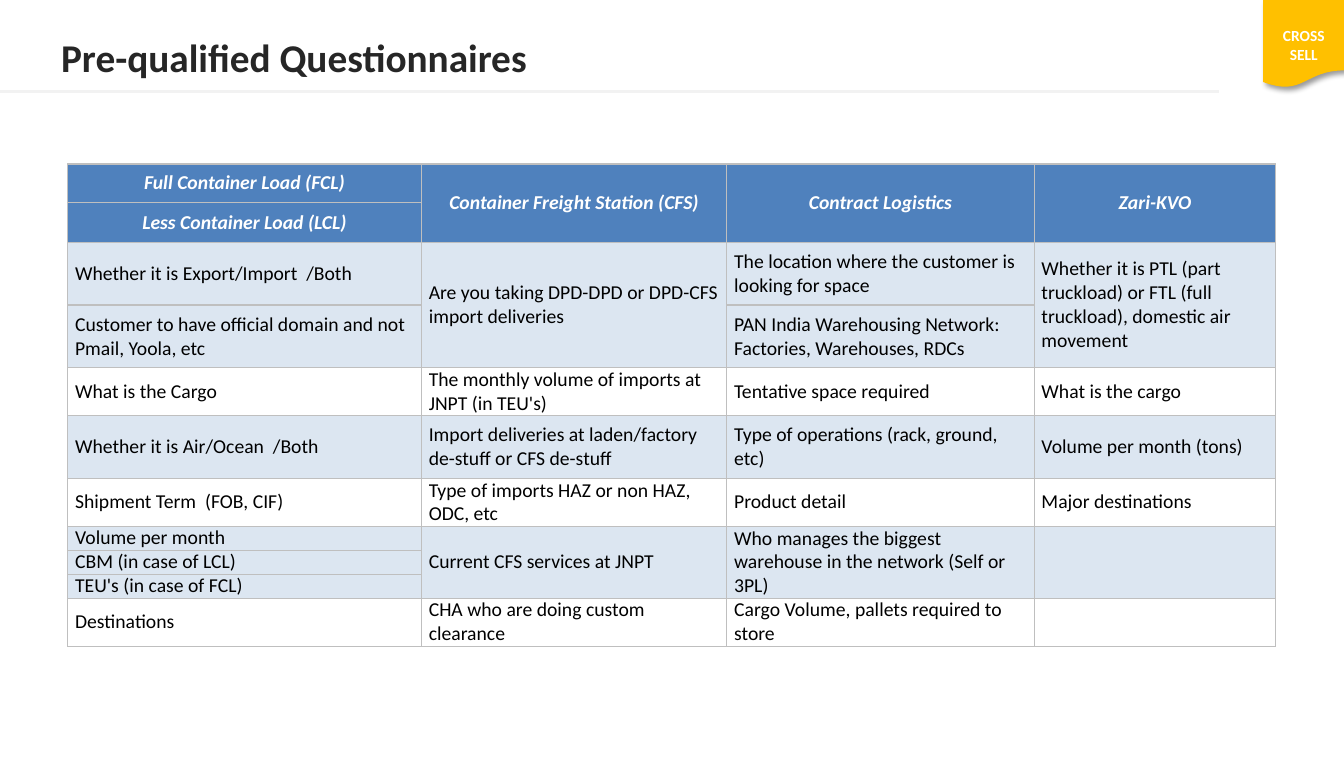
from dataclasses import dataclass

from lxml import etree
from pptx import Presentation
from pptx.dml.color import RGBColor
from pptx.enum.shapes import MSO_CONNECTOR, MSO_SHAPE
from pptx.enum.text import MSO_ANCHOR, PP_ALIGN
from pptx.oxml import parse_xml
from pptx.oxml.ns import nsdecls, qn
from pptx.slide import Slide
from pptx.table import Table, _Cell
from pptx.text.text import TextFrame
from pptx.util import Pt

LINE = MSO_CONNECTOR.STRAIGHT
BADGE = MSO_SHAPE.FLOWCHART_DOCUMENT
MIDDLE = MSO_ANCHOR.MIDDLE
CENTER = PP_ALIGN.CENTER
LEFT = PP_ALIGN.LEFT

WHITE = RGBColor(0xFF, 0xFF, 0xFF)
BLACK = RGBColor(0x00, 0x00, 0x00)
INK = RGBColor(0x26, 0x26, 0x26)
BLUE = RGBColor(0x4F, 0x81, 0xBD)
PALE = RGBColor(0xDC, 0xE6, 0xF1)
GOLD = RGBColor(0xFF, 0xC0, 0x00)
RULE = RGBColor(0xF2, 0xF2, 0xF2)
EDGE = RGBColor(0xBF, 0xBF, 0xBF)
FONT = "Calibri"


@dataclass(frozen=True)
class Row:
    """One table row; a text of None joins the cell above."""
    height: float
    fill: RGBColor
    texts: tuple[str | None, ...]


WIDTHS = (252, 217.6, 219, 172.2)
ROWS = (
    Row(27.4, BLUE, ("Full Container Load (FCL)", "Container Freight Station (CFS)",
                     "Contract Logistics", "Zari-KVO")),
    Row(28.6, BLUE, ("Less Container Load (LCL)", None, None, None)),
    Row(44.6, PALE, ("Whether it is Export/Import  /Both",
                     "Are you taking DPD-DPD or DPD-CFS import deliveries",
                     "The location where the customer is looking for space",
                     "Whether it is PTL (part truckload) or FTL (full truckload), "
                     "domestic air movement")),
    Row(44.6, PALE, ("Customer to have official domain and not Pmail, Yoola, etc", None,
                     "PAN India Warehousing Network: Factories, Warehouses, RDCs", None)),
    Row(34.2, WHITE, ("What is the Cargo",
                      "The monthly volume of imports at JNPT (in TEU's)",
                      "Tentative space required", "What is the cargo")),
    Row(44.6, PALE, ("Whether it is Air/Ocean  /Both",
                     "Import deliveries at laden/factory de-stuff or CFS de-stuff",
                     "Type of operations (rack, ground, etc)",
                     "Volume per month (tons)")),
    Row(34.2, WHITE, ("Shipment Term  (FOB, CIF)",
                      "Type of imports HAZ or non HAZ, ODC, etc",
                      "Product detail", "Major destinations")),
    Row(17.1, PALE, ("Volume per month", "Current CFS services at JNPT",
                     "Who manages the biggest warehouse in the network (Self or 3PL)", "")),
    Row(17.1, PALE, ("CBM (in case of LCL)", None, None, None)),
    Row(17.1, PALE, ("TEU's (in case of FCL)", None, None, None)),
    Row(34.2, WHITE, ("Destinations", "CHA who are doing custom clearance",
                      "Cargo Volume, pallets required to store", "")),
)


def write(frame: TextFrame, text: str, size: float, color: RGBColor,
          bold: bool = False, italic: bool = False, align: PP_ALIGN = LEFT) -> None:
    frame.word_wrap = True
    para = frame.paragraphs[0]
    para.text = text
    para.alignment = align
    font = para.font
    font.name, font.size = FONT, Pt(size)
    font.bold, font.italic = bold, italic
    font.color.rgb = color


def add_edges(cell: _Cell) -> None:
    props = cell._tc.get_or_add_tcPr()
    for side in ("lnL", "lnR", "lnT", "lnB"):
        props.append(parse_xml(
            f'<a:{side} {nsdecls("a")} w="{Pt(1)}"><a:solidFill>'
            f'<a:srgbClr val="{EDGE}"/></a:solidFill></a:{side}>'))


def fill_cell(cell: _Cell, row: Row, text: str | None) -> None:
    add_edges(cell)
    cell.fill.solid()
    cell.fill.fore_color.rgb = row.fill
    cell.vertical_anchor = MIDDLE
    cell.margin_left = cell.margin_right = Pt(5.2)
    cell.margin_top = cell.margin_bottom = Pt(0)
    head = row.fill == BLUE
    write(cell.text_frame, text or "", 14, WHITE if head else BLACK,
          head, head, CENTER if head else LEFT)


def merge_down(table: Table) -> None:
    for col in range(len(WIDTHS)):
        start = 0
        for end in range(1, len(ROWS) + 1):
            if end < len(ROWS) and ROWS[end].texts[col] is None:
                continue
            if end - start > 1:
                table.cell(start, col).merge(table.cell(end - 1, col))
            start = end


def add_grid(slide: Slide) -> None:
    table = slide.shapes.add_table(
        len(ROWS), len(WIDTHS), Pt(48.3), Pt(116.8),
        Pt(sum(WIDTHS)), Pt(sum(row.height for row in ROWS))).table
    for col, width in zip(table.columns, WIDTHS):
        col.width = Pt(width)
    for i, row in enumerate(ROWS):
        table.rows[i].height = Pt(row.height)
        for j, text in enumerate(row.texts):
            fill_cell(table.cell(i, j), row, text)
    merge_down(table)


def add_badge(slide: Slide) -> None:
    badge = slide.shapes.add_shape(BADGE, Pt(900), Pt(0), Pt(58), Pt(62.6))
    badge.shadow.inherit = False
    badge.fill.solid()
    badge.fill.fore_color.rgb = GOLD
    badge.line.fill.background()
    effects = badge._element.spPr.find(qn("a:effectLst"))
    effects.append(parse_xml(
        f'<a:outerShdw {nsdecls("a")} blurRad="{Pt(4)}" dist="{Pt(3)}" dir="2700000" '
        'algn="tl" rotWithShape="0"><a:srgbClr val="000000"><a:alpha val="40000"/>'
        '</a:srgbClr></a:outerShdw>'))
    frame = badge.text_frame
    frame.vertical_anchor = MIDDLE
    frame.margin_top = Pt(17)
    write(frame, "CROSS SELL", 11, WHITE, bold=True, align=CENTER)


def add_title(slide: Slide) -> None:
    box = slide.shapes.add_textbox(Pt(36.5), Pt(20), Pt(606), Pt(36))
    write(box.text_frame, "Pre-qualified Questionnaires", 28, INK, bold=True)
    rule = slide.shapes.add_connector(LINE, Pt(0), Pt(65), Pt(868.3), Pt(65))
    rule.line.color.rgb = RULE
    rule.line.width = Pt(2.25)
    etree.SubElement(rule._element.spPr, qn("a:effectLst"))


def main() -> None:
    deck = Presentation()
    deck.slide_width, deck.slide_height = Pt(957.6), Pt(540)
    slide = deck.slides.add_slide(deck.slide_layouts[6])
    add_badge(slide)
    add_grid(slide)
    add_title(slide)
    deck.save("out.pptx")


if __name__ == "__main__":
    main()
